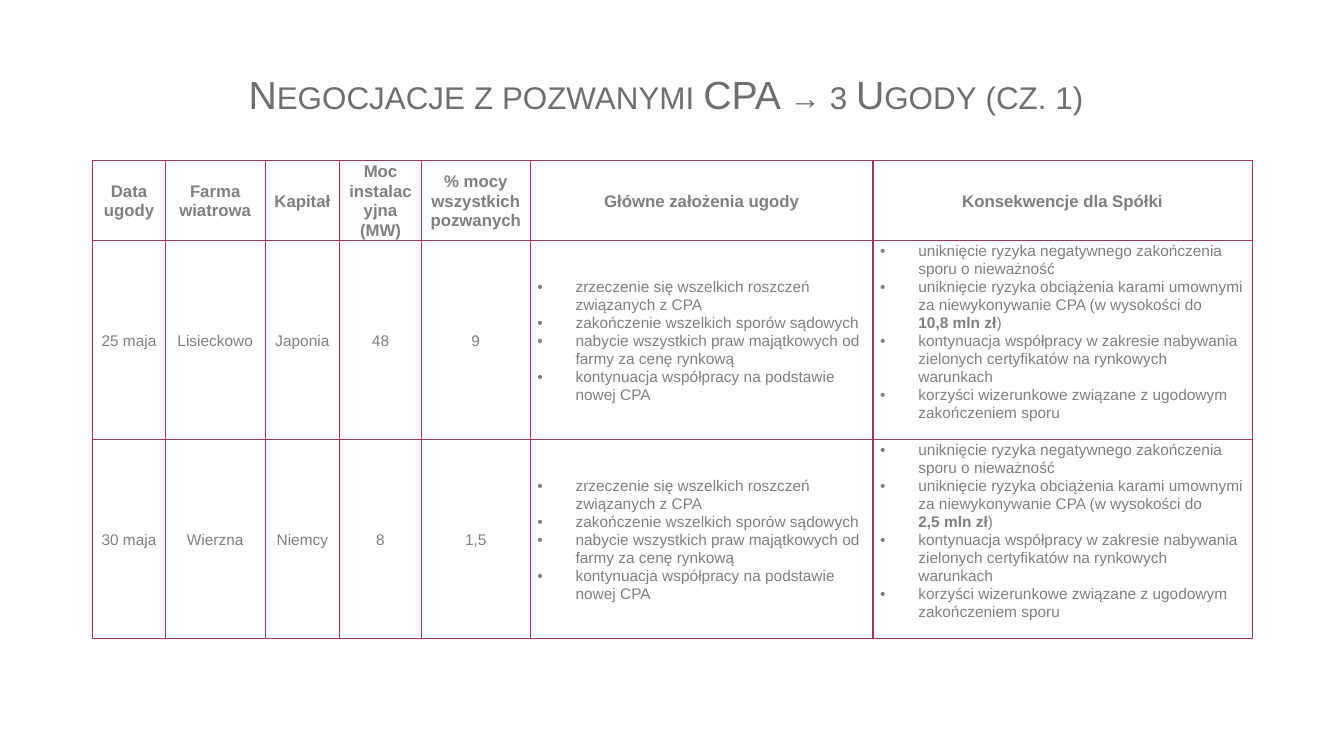
from lxml.etree import SubElement
from pptx import Presentation
from pptx.dml.color import RGBColor
from pptx.enum.text import MSO_ANCHOR, PP_ALIGN
from pptx.oxml.ns import qn
from pptx.util import Inches, Pt

WIDTH, HEIGHT = Inches(13.33), Inches(7.5)
COLORS = {"title": "6D6E71", "text": "7F7F7F", "border": "A43757"}
COLUMNS = [0.72, 0.99, 0.74, 0.81, 1.08, 3.4, 3.76]
ROWS = [0.79, 1.98, 1.97]
HEADERS = ["Data ugody", "Farma wiatrowa", "Kapitał", "Moc instalacyjna (MW)",
           "% mocy wszystkich pozwanych", "Główne założenia ugody",
           "Konsekwencje dla Spółki"]
FARMS = [
    (["25 maja", "Lisieckowo", "Japonia", "48", "9"], "10,8 mln zł"),
    (["30 maja", "Wierzna", "Niemcy", "8", "1,5"], "2,5 mln zł"),
]
TERMS = [
    "zrzeczenie się wszelkich roszczeń związanych z CPA",
    "zakończenie wszelkich sporów sądowych",
    "nabycie wszystkich praw majątkowych od farmy za cenę rynkową",
    "kontynuacja współpracy na podstawie nowej CPA",
]


def consequences(penalty):
    return [
        "uniknięcie ryzyka negatywnego zakończenia sporu o nieważność",
        "uniknięcie ryzyka obciążenia karami umownymi za niewykonywanie CPA "
        f"(w wysokości do \n**{penalty}**)",
        "kontynuacja współpracy w zakresie nabywania zielonych certyfikatów "
        "na rynkowych warunkach",
        "korzyści wizerunkowe związane z ugodowym zakończeniem sporu",
    ]


def apply_format(target, values):
    for name, value in values.items():
        setattr(target, name, value)


def add_span(para, text, size, color, bold=False):
    span = para.add_run()
    span.text = text
    apply_format(span.font, {"name": "Arial", "size": Pt(size), "bold": bold})
    span.font.color.rgb = RGBColor.from_string(COLORS[color])
    return span


def add_bullet(para):
    properties = para._p.get_or_add_pPr()
    properties.set("marL", str(Inches(0.38)))
    properties.set("indent", str(-Inches(0.38)))
    SubElement(properties, qn("a:buFont"), typeface="Arial")
    SubElement(properties, qn("a:buChar"), char="•")


def write_para(para, text, size, bold, bulleted):
    apply_format(para, {
        "alignment": PP_ALIGN.LEFT if bulleted else PP_ALIGN.CENTER,
        "line_spacing": 1.05,
    })
    if bulleted:
        add_bullet(para)
    for line_number, line in enumerate(text.split("\n")):
        if line_number:
            para.add_line_break()
        for part_number, part in enumerate(line.split("**")):
            if part:
                add_span(para, part, size, "text", bold or part_number % 2 == 1)


def add_borders(cell):
    properties = cell._tc.get_or_add_tcPr()
    for position, side in enumerate(("lnL", "lnR", "lnT", "lnB")):
        line = SubElement(properties, qn(f"a:{side}"), w=str(Pt(1)))
        fill = SubElement(line, qn("a:solidFill"))
        SubElement(fill, qn("a:srgbClr"), val=COLORS["border"])
        properties.insert(position, line)


def write_cell(cell, content, size=11, bold=False, bottom=0):
    apply_format(cell, {
        "vertical_anchor": MSO_ANCHOR.MIDDLE,
        "margin_left": Inches(0.07), "margin_right": Inches(0.07),
        "margin_top": Inches(0.01), "margin_bottom": Inches(bottom),
    })
    cell.fill.background()
    add_borders(cell)
    bulleted = isinstance(content, list)
    frame = cell.text_frame
    for number, text in enumerate(content if bulleted else [content]):
        para = frame.add_paragraph() if number else frame.paragraphs[0]
        write_para(para, text, size, bold, bulleted)


def add_title(page, text):
    box = page.shapes.title
    apply_format(box, {"left": Inches(0.57), "top": Inches(0.67),
                       "width": Inches(12.07), "height": Inches(0.52)})
    apply_format(box.text_frame, {
        "word_wrap": True, "vertical_anchor": MSO_ANCHOR.MIDDLE,
        "margin_left": 0, "margin_right": 0, "margin_top": 0, "margin_bottom": 0,
    })
    para = box.text_frame.paragraphs[0]
    apply_format(para, {"alignment": PP_ALIGN.CENTER, "space_before": Pt(7.5)})
    span = add_span(para, text, 28, "title")
    span.font._element.set("cap", "small")


def add_settlements(page):
    frame = page.shapes.add_table(len(ROWS), len(COLUMNS), Inches(0.92), Inches(1.59),
                                  Inches(sum(COLUMNS)), Inches(sum(ROWS)))
    table = frame.table
    apply_format(table, {"first_row": False, "horz_banding": False})
    for column, width in zip(table.columns, COLUMNS):
        column.width = Inches(width)
    for row, height in zip(table.rows, ROWS):
        row.height = Inches(height)
    for column, header in enumerate(HEADERS):
        write_cell(table.cell(0, column), header, size=12, bold=True)
    for row, (facts, penalty) in enumerate(FARMS, start=1):
        for column, content in enumerate([*facts, TERMS]):
            write_cell(table.cell(row, column), content)
        write_cell(table.cell(row, len(COLUMNS) - 1), consequences(penalty), bottom=0.18)


def main():
    deck = Presentation()
    apply_format(deck, {"slide_width": WIDTH, "slide_height": HEIGHT})
    page = deck.slides.add_slide(deck.slide_layouts.get_by_name("Title Only"))
    add_title(page, "Negocjacje z pozwanymi CPA → 3 Ugody (cz. 1)")
    add_settlements(page)
    deck.save("out.pptx")


if __name__ == "__main__":
    main()
